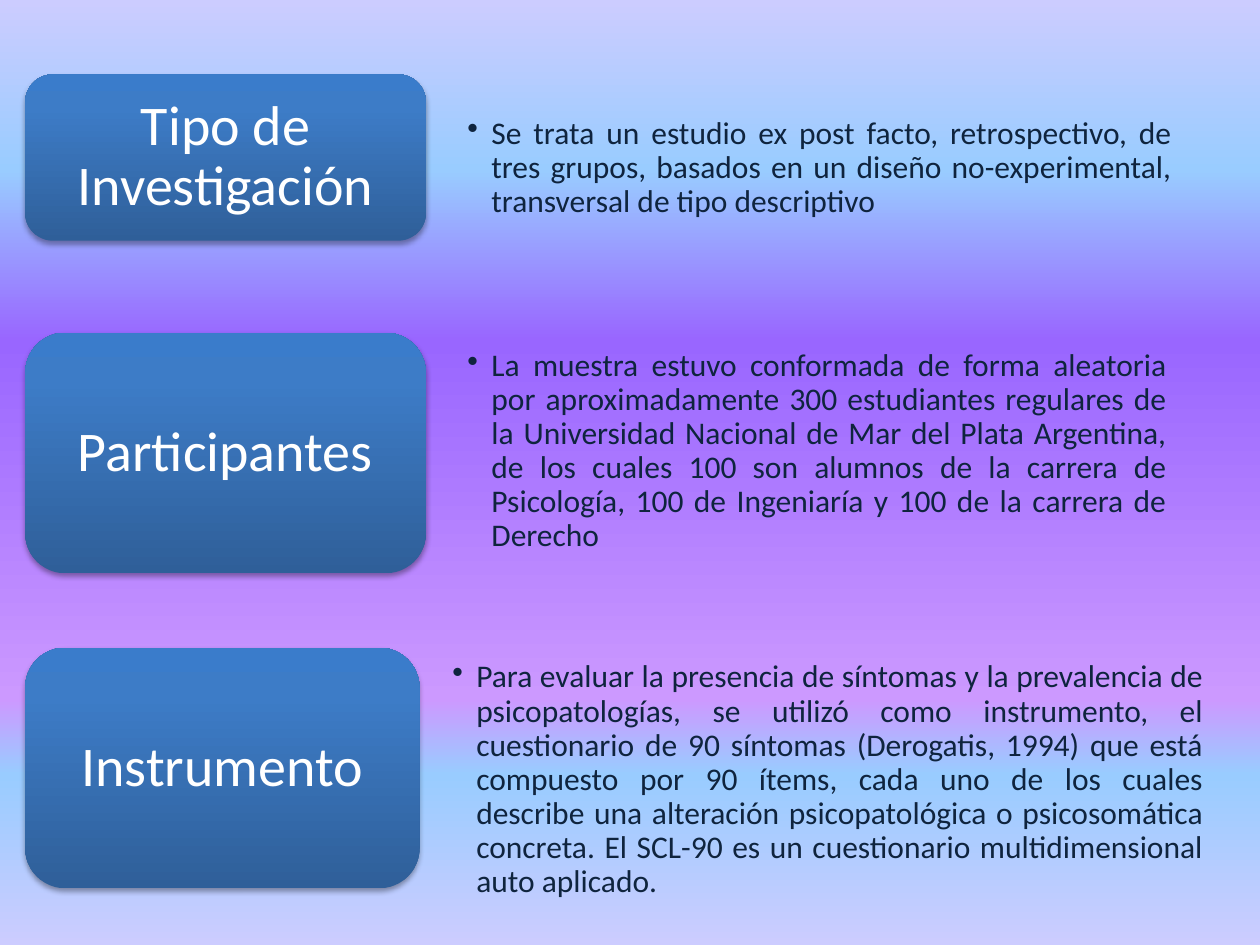
import pptx
import pptx.dml.color
import pptx.enum.shapes
import pptx.enum.text
import pptx.oxml
import pptx.oxml.ns
import pptx.util

RGB = pptx.dml.color.RGBColor
Inches = pptx.util.Inches
ALIGN = pptx.enum.text.PP_ALIGN
qn = pptx.oxml.ns.qn
NS = pptx.oxml.ns.nsdecls("a")

WHITE = RGB(0xFF, 0xFF, 0xFF)
NAVY = RGB(0x0F, 0x24, 0x3E)
LAVENDER = RGB(0xCC, 0xCC, 0xFF)
SKY = RGB(0x99, 0xCC, 0xFF)
VIOLET = RGB(0x99, 0x66, 0xFF)
ORCHID = RGB(0xCC, 0x99, 0xFF)
BACKDROP = [(0, LAVENDER), (18, SKY), (36, VIOLET), (74, ORCHID), (82, SKY), (100, LAVENDER)]
CARD_BLUES = [(0, RGB(0x2F, 0x5F, 0x99)), (80, RGB(0x3D, 0x7C, 0xC7)), (100, RGB(0x3A, 0x7C, 0xCB))]

FONT = "Calibri"
CARD_LEFT = 0.2
CORNER = 0.1667  # corner radius as a share of the card height
CORNER_INSET = 0.29  # share of the radius that the caption keeps clear

CAPTION = {"align": ALIGN.CENTER, "size": 32, "color": WHITE, "insets": (0.13, 0.07, 0.13, 0.07)}
DETAIL = {"align": ALIGN.JUSTIFY, "size": 18, "color": NAVY, "insets": (0.27, 0.14, 0.27, 0.14)}

# Caption, card (top, width, height), detail, detail box, detail format
SECTIONS = [
    ("Tipo de Investigación", (0.59, 3.18, 1.32),
     "Se trata un estudio ex post facto, retrospectivo, de tres grupos, basados en un diseño "
     "no-experimental, transversal de tipo descriptivo",
     (3.44, 0.53, 6.13, 1.61), DETAIL),
    ("Participantes", (2.64, 3.18, 1.91),
     "La muestra estuvo conformada de forma aleatoria por aproximadamente 300 estudiantes "
     "regulares de la Universidad Nacional de Mar del Plata Argentina, de los cuales 100 son "
     "alumnos de la carrera de Psicología, 100 de Ingeniaría y 100 de la carrera de Derecho",
     (3.44, 2.42, 6.09, 2.33), DETAIL),
    ("Instrumento", (5.14, 3.13, 1.91),
     "Para evaluar la presencia de síntomas y la prevalencia de psicopatologías, se utilizó como "
     "instrumento, el cuestionario de 90 síntomas (Derogatis, 1994) que está compuesto por 90 "
     "ítems, cada uno de los cuales describe una alteración psicopatológica o psicosomática "
     "concreta. El SCL-90 es un cuestionario multidimensional auto aplicado.",
     (3.32, 5.3, 6.5, 1.66), {**DETAIL, "insets": (0.27, 0.26, 0.27, 0.14)}),
]


def apply_gradient(fill, stops, angle):
    """Fill with any number of (percent, colour) stops, angle clockwise."""
    fill.gradient()
    stop_list = fill.gradient_stops[0]._gs.getparent()
    for old_stop in list(stop_list):
        stop_list.remove(old_stop)
    for percent, color in stops:
        stop_list.append(pptx.oxml.parse_xml(
            f'<a:gs {NS} pos="{percent * 1000}"><a:srgbClr val="{color}"/></a:gs>'))
    stop_list.getparent().find(qn("a:lin")).set("ang", str(angle * 60000))


def add_card(slide, box):
    card = slide.shapes.add_shape(
        pptx.enum.shapes.MSO_SHAPE.ROUNDED_RECTANGLE, *map(Inches, box))
    card.adjustments[0] = CORNER
    apply_gradient(card.fill, CARD_BLUES, 270)
    card.line.fill.background()
    # Soft shadow below the card
    card.shadow.inherit = False
    card._element.spPr.find(qn("a:effectLst")).append(pptx.oxml.parse_xml(
        f'<a:outerShdw {NS} blurRad="39400" dist="22900" dir="5400000" rotWithShape="0">'
        '<a:srgbClr val="000000"><a:alpha val="35000"/></a:srgbClr></a:outerShdw>'))


def add_text(slide, text, box, style):
    frame = slide.shapes.add_textbox(*map(Inches, box)).text_frame
    frame.word_wrap = True
    frame.vertical_anchor = pptx.enum.text.MSO_ANCHOR.MIDDLE
    for side, inset in zip(("left", "top", "right", "bottom"), style["insets"]):
        setattr(frame, f"margin_{side}", Inches(inset))
    paragraph = frame.paragraphs[0]
    paragraph.alignment = style["align"]
    paragraph.line_spacing = 0.9
    run = paragraph.add_run()
    run.text = text
    run.font.name = FONT
    run.font.size = pptx.util.Pt(style["size"])
    run.font.color.rgb = style["color"]
    return paragraph


def add_bullet(paragraph):
    paragraph.level = 1
    properties = paragraph._p.get_or_add_pPr()
    indent = Inches(0.19)
    for name, value in {"marL": indent, "indent": -indent}.items():
        properties.set(name, str(value))
    properties.append(pptx.oxml.parse_xml(f'<a:buChar {NS} char="•"/>'))


def main():
    deck = pptx.Presentation()
    deck.slide_width, deck.slide_height = Inches(10), Inches(7.5)
    slide = deck.slides.add_slide(deck.slide_layouts[6])
    apply_gradient(slide.background.fill, BACKDROP, 90)

    for caption, (top, width, height), detail, detail_box, detail_style in SECTIONS:
        add_bullet(add_text(slide, detail, detail_box, detail_style))
        add_card(slide, (CARD_LEFT, top, width, height))
        # The caption sits inside the rounded corners
        gap = height * CORNER * CORNER_INSET
        add_text(slide, caption,
                 (CARD_LEFT + gap, top + gap, width - 2 * gap, height - 2 * gap), CAPTION)

    deck.save("out.pptx")


if __name__ == "__main__":
    main()
